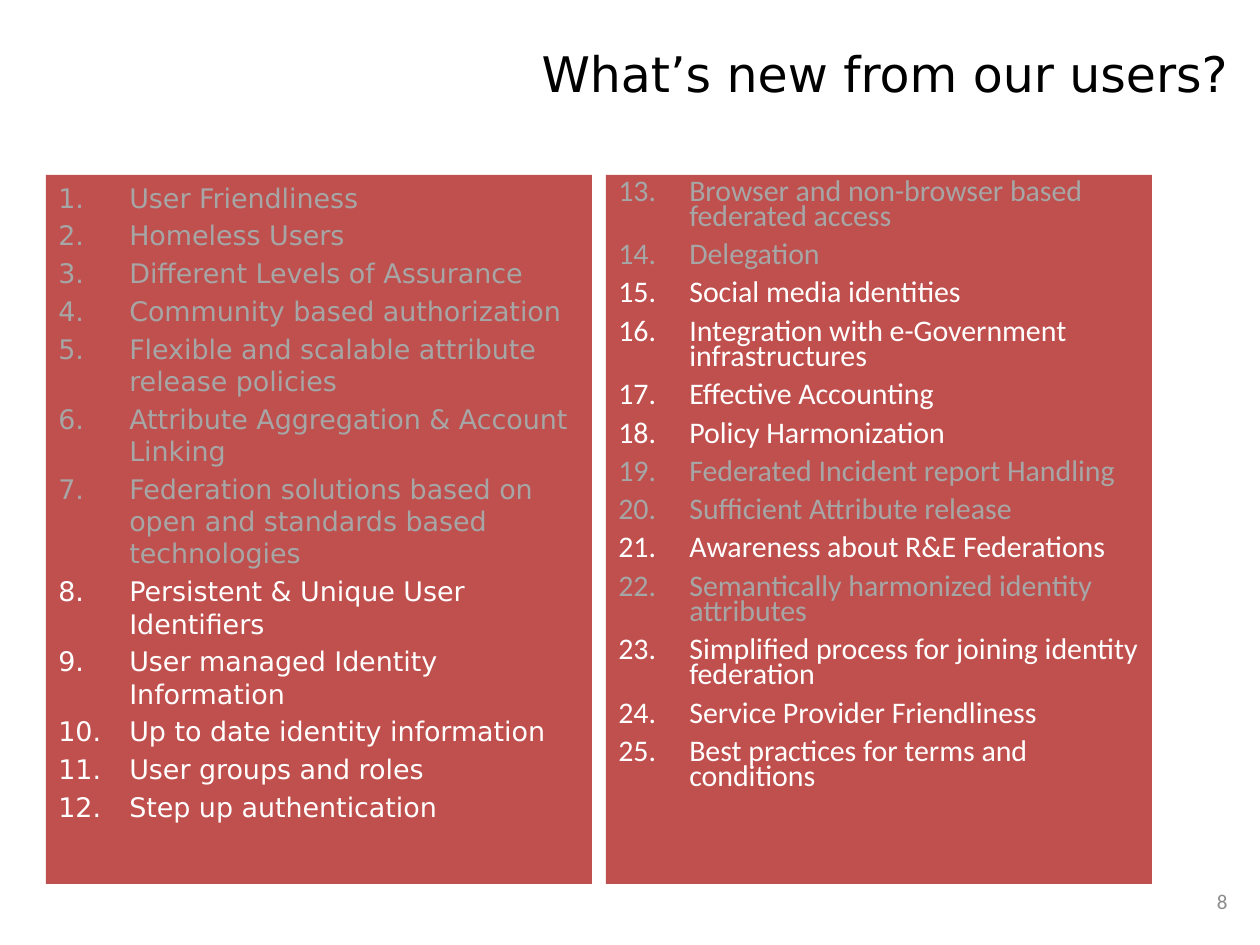
"""Build the slide listing new user requirements in two numbered panels."""
from dataclasses import dataclass

import lxml.etree
import pptx
import pptx.dml.color
import pptx.enum.shapes
import pptx.enum.text
import pptx.oxml.ns
import pptx.util

PX = 914400 // 126
INDENT = 71
RED, GREY, WHITE = "C0504D", "A6A6A6", "FFFFFF"
RIGHT = pptx.enum.text.PP_ALIGN.RIGHT
LEFT = pptx.enum.text.PP_ALIGN.LEFT
TOP = pptx.enum.text.MSO_ANCHOR.TOP
MIDDLE = pptx.enum.text.MSO_ANCHOR.MIDDLE


@dataclass
class Panel:
    """A red panel holding part of the numbered list."""
    left: int
    start: int
    font: str
    size: float
    line_spacing: float
    space_before: float
    items: list[str]
    highlighted: set[int]


PANELS = [
    Panel(46, 1, "DejaVu Sans", 15.4, 1.0, 3.08, [
        "User Friendliness",
        "Homeless Users",
        "Different Levels of Assurance",
        "Community based authorization",
        "Flexible and scalable attribute release policies",
        "Attribute Aggregation & Account Linking",
        "Federation solutions based on open and standards based technologies",
        "Persistent & Unique User Identifiers",
        "User managed Identity Information",
        "Up to date identity information",
        "User groups and roles",
        "Step up authentication",
    ], {8, 9, 10, 11, 12}),
    Panel(606, 13, "Calibri", 17.1, 0.7, 7.5, [
        "Browser and non-browser based federated access",
        "Delegation",
        "Social media identities",
        "Integration with e-Government infrastructures",
        "Effective Accounting",
        "Policy Harmonization",
        "Federated Incident report Handling",
        "Sufficient Attribute release",
        "Awareness about R&E Federations",
        "Semantically harmonized identity attributes",
        "Simplified process for joining identity federation",
        "Service Provider Friendliness",
        "Best practices for terms and conditions",
    ], {15, 16, 17, 18, 21, 23, 24, 25}),
]


def rgb(color: str) -> pptx.dml.color.RGBColor:
    """Turn a hex string into a colour."""
    return pptx.dml.color.RGBColor.from_string(color)


def box(*px: int) -> list[int]:
    """Turn left, top, width and height in px into EMU."""
    return [value * PX for value in px]


def write(p, text: str, *, font: str, size: float, color: str, align=LEFT) -> None:
    """Add formatted text to a paragraph."""
    p.alignment = align
    r = p.add_run()
    r.text = text
    r.font.name = font
    r.font.size = pptx.util.Pt(size)
    r.font.color.rgb = rgb(color)


def number(p, start: int) -> None:
    """Give a paragraph automatic numbering with a hanging indent."""
    props = p._p.get_or_add_pPr()
    props.set("marL", str(INDENT * PX))
    props.set("indent", str(-INDENT * PX))
    bullet = lxml.etree.SubElement(props, pptx.oxml.ns.qn("a:buAutoNum"))
    bullet.set("type", "arabicPeriod")
    bullet.set("startAt", str(start))


def add_label(s, area: list[int], text: str, anchor, **style) -> None:
    """Add a right-aligned text box."""
    tf = s.shapes.add_textbox(*area).text_frame
    tf.word_wrap = True
    tf.vertical_anchor = anchor
    write(tf.paragraphs[0], text, align=RIGHT, **style)


def add_panel(s, panel: Panel) -> None:
    """Draw a panel with its numbered items."""
    sp = s.shapes.add_shape(pptx.enum.shapes.MSO_SHAPE.RECTANGLE,
                            *box(panel.left, 175, 546, 709))
    sp.shadow.inherit = False
    sp.fill.solid()
    sp.fill.fore_color.rgb = rgb(RED)
    sp.line.fill.background()
    tf = sp.text_frame
    tf.word_wrap = True
    tf.vertical_anchor = TOP
    for index, item in enumerate(panel.items):
        p = tf.add_paragraph() if index else tf.paragraphs[0]
        number(p, panel.start)
        p.line_spacing = panel.line_spacing
        p.space_before = pptx.util.Pt(panel.space_before if index else 0)
        color = WHITE if panel.start + index in panel.highlighted else GREY
        write(p, item, font=panel.font, size=panel.size, color=color)


def main() -> None:
    """Build and save the slide."""
    prs = pptx.Presentation()
    prs.slide_width, prs.slide_height = pptx.util.Inches(10), pptx.util.Inches(7.5)
    s = prs.slides.add_slide(prs.slide_layouts[6])
    add_label(s, box(357, 37, 883, 157), "What’s new from our users?", TOP,
              font="DejaVu Sans", size=28, color="000000")
    for panel in PANELS:
        add_panel(s, panel)
    add_label(s, box(946, 876, 294, 50), "8", MIDDLE,
              font="Calibri", size=12, color="8C8C8C")
    prs.save("out.pptx")


if __name__ == "__main__":
    main()
